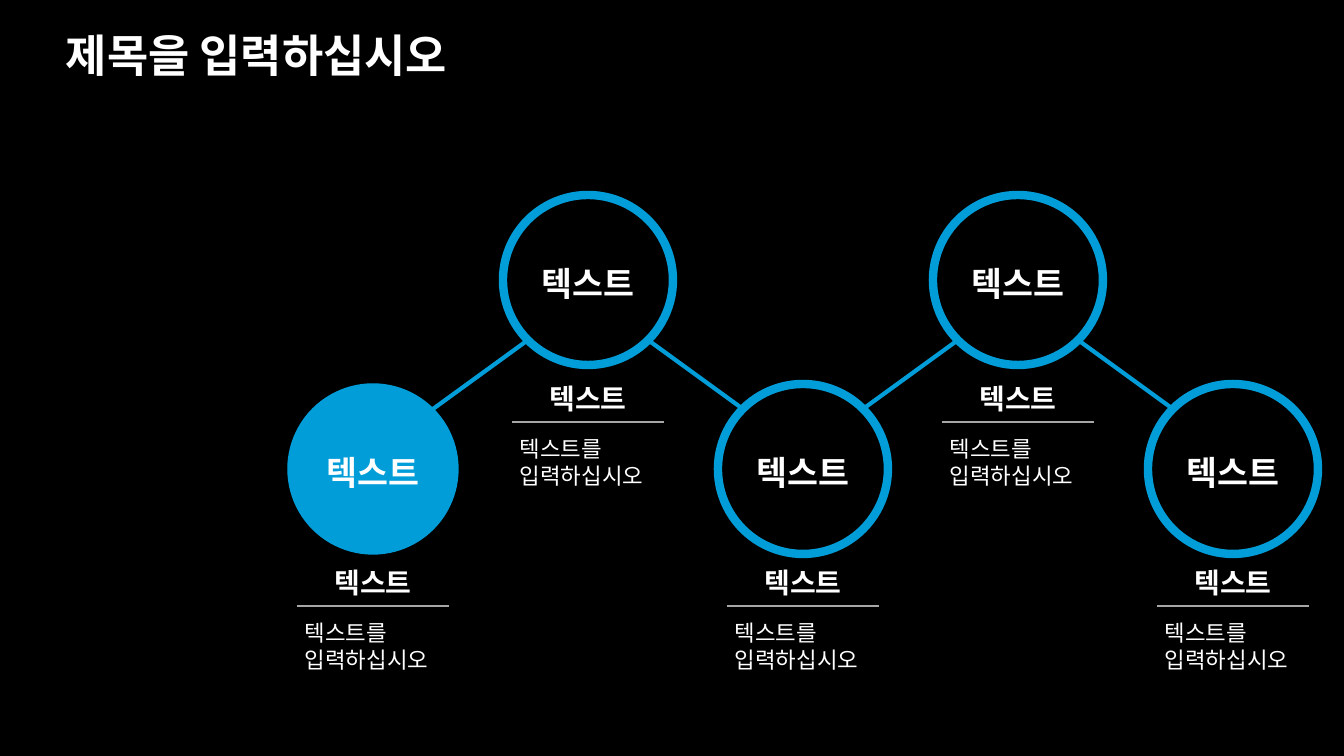
from lxml import etree
from pptx import Presentation
from pptx.dml.color import RGBColor
from pptx.enum.shapes import MSO_CONNECTOR, MSO_SHAPE
from pptx.enum.text import MSO_ANCHOR, MSO_AUTO_SIZE, PP_ALIGN
from pptx.oxml.ns import qn
from pptx.util import Emu, Pt

ELLIPSE = MSO_SHAPE.OVAL
STRAIGHT = MSO_CONNECTOR.STRAIGHT
MIDDLE, TOP = MSO_ANCHOR.MIDDLE, MSO_ANCHOR.TOP
GROW, FIXED = MSO_AUTO_SIZE.SHAPE_TO_FIT_TEXT, MSO_AUTO_SIZE.NONE
LEFT, CENTER = PP_ALIGN.LEFT, PP_ALIGN.CENTER

BLACK = RGBColor(0x00, 0x00, 0x00)
WHITE = RGBColor(0xFF, 0xFF, 0xFF)
BLUE = RGBColor(0x00, 0x9D, 0xD9)
GRAY = RGBColor(0xA6, 0xA6, 0xA6)
FONT = "Calibri"

TITLE = "제목을 입력하십시오"
STEPS = [
    {"label": "텍스트", "heading": "텍스트", "body": "텍스트를 입력하십시오", "row": "low", "fill": BLUE, "outline": 1},
    {"label": "텍스트", "heading": "텍스트", "body": "텍스트를 입력하십시오", "row": "high", "fill": BLACK, "outline": 6},
    {"label": "텍스트", "heading": "텍스트", "body": "텍스트를 입력하십시오", "row": "low", "fill": BLACK, "outline": 6},
    {"label": "텍스트", "heading": "텍스트", "body": "텍스트를 입력하십시오", "row": "high", "fill": BLACK, "outline": 6},
    {"label": "텍스트", "heading": "텍스트", "body": "텍스트를 입력하십시오", "row": "low", "fill": BLACK, "outline": 6},
]

SLIDE_W, SLIDE_H = 1344, 756
FIRST_X, STEP_X = 373, 215
CIRCLE_Y = {"low": 469, "high": 280}
CAPTION_Y = {"low": 561, "high": 377}
RADIUS = 85
LINK_OFFSET = 60
LABEL_W, LABEL_H, LABEL_RISE = 122, 50, 22
CAPTION_W, HEADING_H, BODY_H = 156, 44, 64
RULE_HALF, RULE_DROP, BODY_DROP = 76, 45, 53


def px(length):
    return Emu(round(length * 914400 / 100.8))


def add_text(slide, text, box, size, bold=True, align=CENTER, wrap=True,
             anchor=TOP, fit=GROW, spacing=1.0):
    frame = slide.shapes.add_textbox(*map(px, box)).text_frame
    paragraph = frame.paragraphs[0]
    run = paragraph.add_run()
    run.text = text
    formats = [
        (frame, {"word_wrap": wrap, "auto_size": fit, "vertical_anchor": anchor}),
        (paragraph, {"alignment": align, "line_spacing": spacing}),
        (run.font, {"name": FONT, "size": Pt(size), "bold": bold}),
    ]
    for target, values in formats:
        for key, value in values.items():
            setattr(target, key, value)
    run.font.color.rgb = WHITE


def add_line(slide, start, end, color, width):
    line = slide.shapes.add_connector(STRAIGHT, *map(px, start + end))
    line.line.color.rgb = color
    line.line.width = Pt(width)
    etree.SubElement(line._element.spPr, qn("a:effectLst"))


def add_circle(slide, step, x, y):
    circle = slide.shapes.add_shape(
        ELLIPSE, px(x - RADIUS), px(y - RADIUS), px(2 * RADIUS), px(2 * RADIUS))
    circle.shadow.inherit = False
    circle.fill.solid()
    circle.fill.fore_color.rgb = step["fill"]
    circle.line.color.rgb = BLUE
    circle.line.width = Pt(step["outline"])
    add_text(slide, step["label"],
             (x - LABEL_W / 2, y - LABEL_RISE, LABEL_W, LABEL_H), 24, wrap=False)


def add_caption(slide, step, x, y):
    left = x - CAPTION_W / 2
    add_text(slide, step["heading"], (left, y, CAPTION_W, HEADING_H), 20)
    add_text(slide, step["body"], (left, y + BODY_DROP, CAPTION_W, BODY_H), 16,
             bold=False, align=LEFT)
    rule_y = y + RULE_DROP
    add_line(slide, (x - RULE_HALF, rule_y), (x + RULE_HALF, rule_y), GRAY, 1.5)


def main():
    deck = Presentation()
    deck.slide_width, deck.slide_height = px(SLIDE_W), px(SLIDE_H)
    slide = deck.slides.add_slide(deck.slide_layouts[6])
    slide.background.fill.solid()
    slide.background.fill.fore_color.rgb = BLACK

    centers = [(FIRST_X + i * STEP_X, CIRCLE_Y[step["row"]])
               for i, step in enumerate(STEPS)]
    for (x1, y1), (x2, y2) in zip(centers, centers[1:]):
        slope = LINK_OFFSET if y2 > y1 else -LINK_OFFSET
        add_line(slide, (x1 + LINK_OFFSET, y1 + slope),
                 (x2 - LINK_OFFSET, y2 - slope), BLUE, 3)

    add_text(slide, TITLE, (56, 22, 1231, 72), 32, align=LEFT,
             anchor=MIDDLE, fit=FIXED, spacing=0.9)
    for step, (x, y) in zip(STEPS, centers):
        add_circle(slide, step, x, y)
        add_caption(slide, step, x, CAPTION_Y[step["row"]])

    deck.save("out.pptx")


if __name__ == "__main__":
    main()
